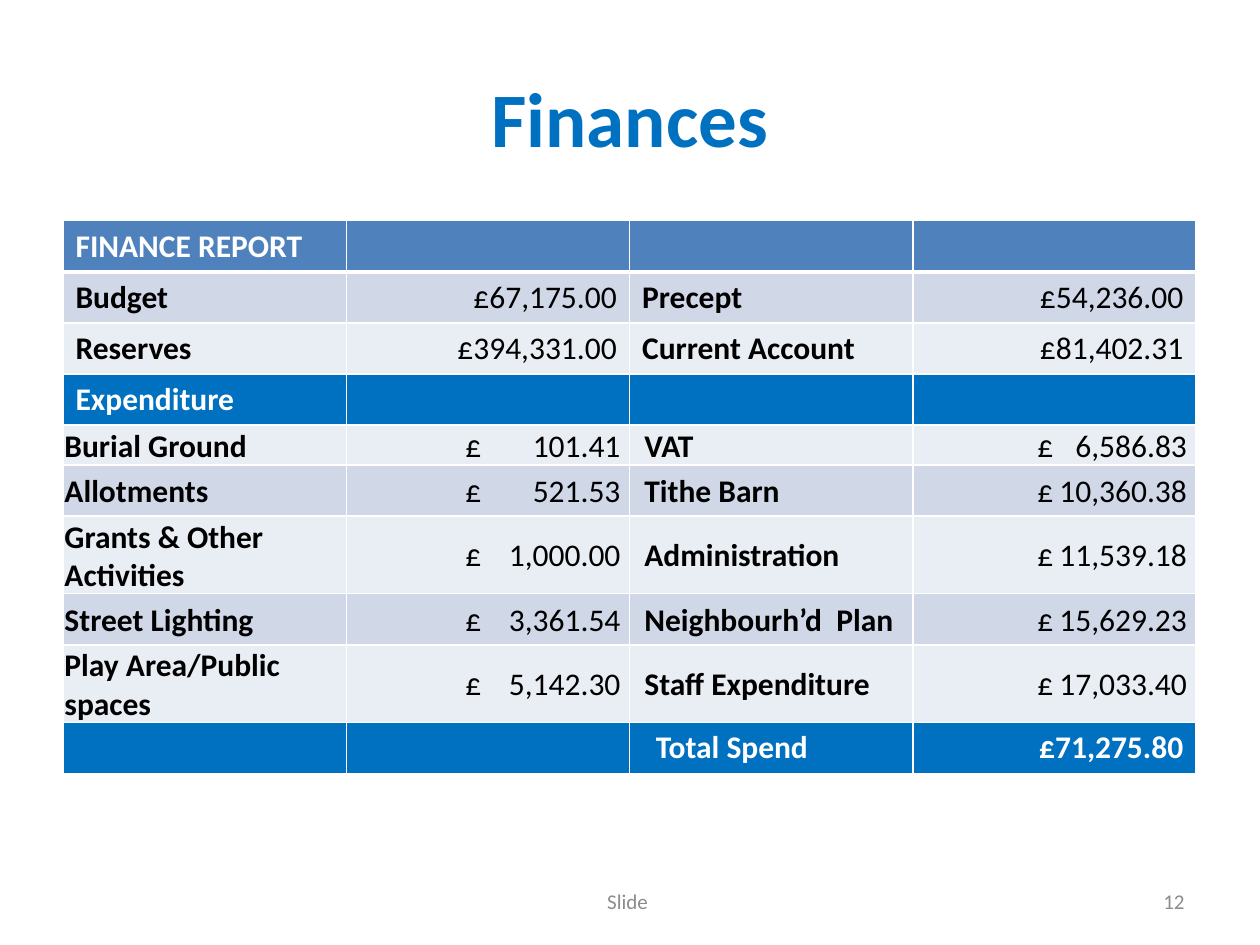
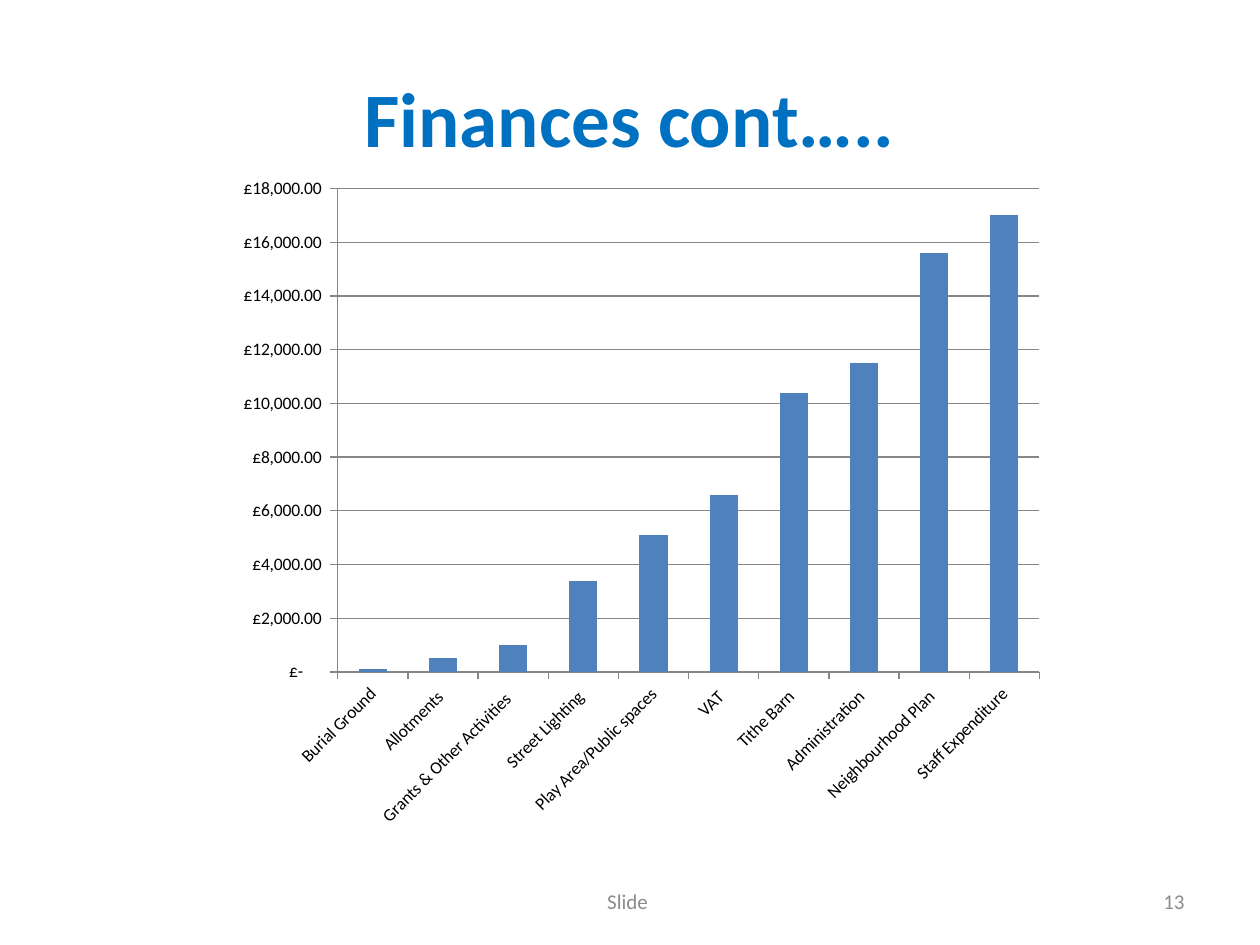
import pptx
import pptx.util
import pptx.chart.data
import pptx.dml.color
import pptx.enum.chart
import pptx.enum.text
import lxml.etree

Cm = pptx.util.Cm
Pt = pptx.util.Pt
ALIGN = pptx.enum.text.PP_ALIGN
MIDDLE = pptx.enum.text.MSO_ANCHOR.MIDDLE
DRAWING = "http://schemas.openxmlformats.org/drawingml/2006/main"

FONT = "Calibri"
BLUE, ACCENT, PALE, PALER = "0070C0", "4F81BD", "D0D8E8", "E9EDF4"
WHITE, BLACK, FOOTER_GREY, LINE_GREY = "FFFFFF", "000000", "8C8C8C", "868686"

TITLES = ["Finances", "Finances cont….."]
FIRST_NUMBER = 12
FOOTER = "Slide "

REPORT = [
    ("header", ["FINANCE REPORT", "", "", ""]),
    ("summary", ["Budget", "£67,175.00", "Precept", "£54,236.00"]),
    ("summary", ["Reserves", "£394,331.00", "Current Account", "£81,402.31"]),
    ("band", ["Expenditure", "", "", ""]),
    ("detail", ["Burial Ground", "101.41", "VAT", "6,586.83"]),
    ("detail", ["Allotments", "521.53", "Tithe Barn", "10,360.38"]),
    ("detail", ["Grants & Other Activities", "1,000.00", "Administration", "11,539.18"]),
    ("detail", ["Street Lighting", "3,361.54", "Neighbourh’d  Plan", "15,629.23"]),
    ("detail", ["Play Area/Public spaces", "5,142.30", "Staff Expenditure", "17,033.40"]),
    ("band", ["", "", "Total Spend", "£71,275.80"]),
]
ROW_HEIGHT, FIRST_DETAIL_HEIGHT, COLUMN_WIDTH = 1.03, 0.36, 5.71
POUND_STOPS, AMOUNT_STOP = {1: 2.37, 3: 2.48}, 5.5

SPENDING = {
    "Burial Ground": 100,
    "Allotments ": 500,
    "Grants & Other Activities  ": 1000,
    "Street Lighting ": 3400,
    "Play Area/Public spaces": 5100,
    "VAT ": 6600,
    "Tithe Barn ": 10400,
    "Administration ": 11500,
    "Neighbourhood Plan ": 15600,
    "Staff Expenditure": 17000,
}
POUNDS = '_("£"* #,##0.00_);_("£"* \\(#,##0.00\\);_("£"* "-"??_);_(@_)'

PLACES = {
    "title": (1.27, 0.76, 22.86, 3.18),
    "report": (1.27, 4.45, 22.86, 9.65),
    "spending": (4.5, 3.33, 16.79, 13.59),
    "footer": (8.68, 17.65, 8.04, 1.02),
    "number": (18.2, 17.65, 5.93, 1.02),
}


def rgb(color):
    return pptx.dml.color.RGBColor.from_string(color)


def place(part):
    return [Cm(length) for length in PLACES[part]]


def apply(target, formats):
    for name, value in formats.items():
        setattr(target, name, value)


def style_font(font, size, color, bold=False):
    apply(font, {"name": FONT, "size": Pt(size), "bold": bold})
    font.color.rgb = rgb(color)


def write(frame, text, align, size, color, bold=False):
    paragraph = frame.paragraphs[0]
    paragraph.alignment = align
    run = paragraph.add_run()
    run.text = text
    style_font(run.font, size, color, bold)
    return paragraph


def add_page(deck, title, number):
    page = deck.slides.add_slide(deck.slide_layouts[5])
    heading = page.shapes.title
    apply(heading, dict(zip(("left", "top", "width", "height"), place("title"))))
    heading.text_frame.vertical_anchor = MIDDLE
    write(heading.text_frame, title, ALIGN.CENTER, 44, BLUE, True)
    for part, text, align in (("footer", FOOTER, ALIGN.CENTER),
                              ("number", str(number), ALIGN.RIGHT)):
        frame = page.shapes.add_textbox(*place(part)).text_frame
        apply(frame, {"word_wrap": True, "vertical_anchor": MIDDLE})
        write(frame, text, align, 12, FOOTER_GREY)
    return page


def add_tab_stops(paragraph, pound_stop):
    stops = lxml.etree.SubElement(paragraph._p.get_or_add_pPr(), f"{{{DRAWING}}}tabLst")
    for position, align in ((pound_stop, "l"), (AMOUNT_STOP, "r")):
        lxml.etree.SubElement(stops, f"{{{DRAWING}}}tab", pos=str(Cm(position)), algn=align)


def add_border(cell, side, width):
    border = lxml.etree.Element(f"{{{DRAWING}}}{side}", w=str(Pt(width)))
    fill = lxml.etree.SubElement(border, f"{{{DRAWING}}}solidFill")
    lxml.etree.SubElement(fill, f"{{{DRAWING}}}srgbClr", val=WHITE)
    cell._tc.get_or_add_tcPr().insert(0, border)


def fill_cell(cell, kind, text, column, fill):
    cell.fill.solid()
    cell.fill.fore_color.rgb = rgb(fill)
    is_amount = column % 2 == 1
    is_detail = kind == "detail"
    if is_detail:
        apply(cell, {"margin_left": Cm(0.3 if column == 2 else 0.03), "margin_right": Cm(0.03),
                     "margin_top": Cm(0.04), "margin_bottom": 0, "vertical_anchor": MIDDLE})
    elif text == "Total Spend":
        cell.margin_left = Cm(0.53)
    if kind == "header":
        add_border(cell, "lnB", 3)
    if not text:
        return
    on_blue = kind in ("header", "band")
    spread = is_detail and is_amount
    paragraph = write(cell.text_frame, f"\t£\t{text}" if spread else text,
                      ALIGN.RIGHT if is_amount and not spread else ALIGN.LEFT,
                      18, WHITE if on_blue else BLACK, on_blue or not is_amount)
    if spread:
        add_tab_stops(paragraph, POUND_STOPS[column])


def add_report(page):
    report = page.shapes.add_table(len(REPORT), 4, *place("report")).table
    for column in report.columns:
        column.width = Cm(COLUMN_WIDTH)
    kinds = [kind for kind, _ in REPORT]
    for index, (kind, texts) in enumerate(REPORT):
        is_first_detail = index == kinds.index("detail")
        report.rows[index].height = Cm(FIRST_DETAIL_HEIGHT if is_first_detail else ROW_HEIGHT)
        fill = {"header": ACCENT, "band": BLUE}.get(kind, PALE if index % 2 else PALER)
        for column, text in enumerate(texts):
            fill_cell(report.cell(index, column), kind, text, column, fill)


def add_spending(page):
    data = pptx.chart.data.CategoryChartData(number_format="General")
    data.categories = list(SPENDING)
    data.add_series("Series 1", list(SPENDING.values()))
    chart = page.shapes.add_chart(pptx.enum.chart.XL_CHART_TYPE.COLUMN_CLUSTERED,
                                  *place("spending"), data).chart
    apply(chart, {"has_legend": False, "has_title": False})
    style_font(chart.font, 10, BLACK)
    apply(chart.plots[0], {"gap_width": 150, "vary_by_categories": False})
    bars = chart.plots[0].series[0].format.fill
    bars.solid()
    bars.fore_color.rgb = rgb(ACCENT)

    names, amounts = chart.category_axis, chart.value_axis
    apply(names, {"has_major_gridlines": False})
    apply(amounts, {"has_major_gridlines": True, "minimum_scale": 0,
                    "maximum_scale": 18000, "major_unit": 2000})
    apply(amounts.tick_labels, {"number_format": POUNDS, "number_format_is_linked": False})
    for axis in (names, amounts):
        axis.major_tick_mark = pptx.enum.chart.XL_TICK_MARK.OUTSIDE
        style_font(axis.tick_labels.font, 10, BLACK)
    for line in (names.format.line, amounts.format.line, amounts.major_gridlines.format.line):
        line.color.rgb = rgb(LINE_GREY)
        line.width = Pt(0.75)
    for body in chart.element.xpath(".//c:catAx/c:txPr/a:bodyPr"):
        body.set("rot", "-2700000")


def main():
    deck = pptx.Presentation()
    apply(deck, {"slide_width": Cm(25.4), "slide_height": Cm(19.05)})
    for index, (title, add_content) in enumerate(zip(TITLES, (add_report, add_spending))):
        add_content(add_page(deck, title, FIRST_NUMBER + index))
    deck.save("out.pptx")


if __name__ == "__main__":
    main()
